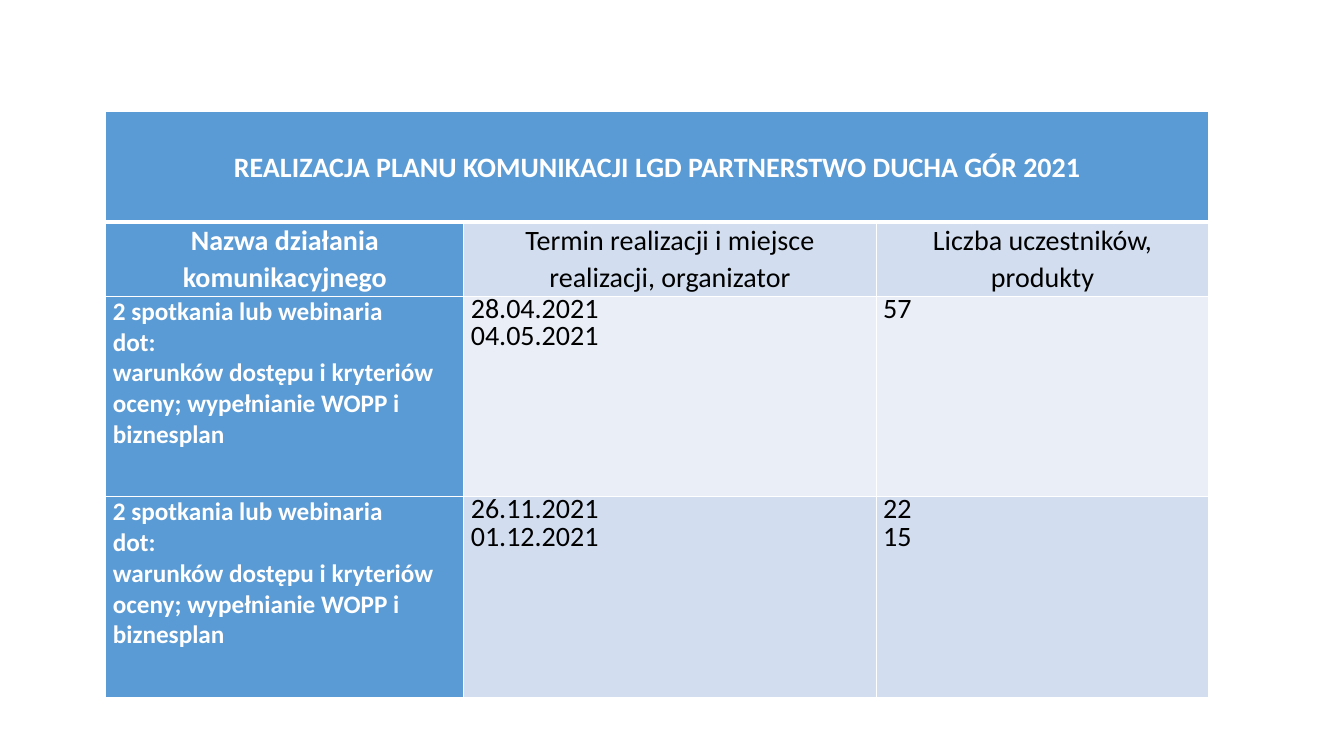
from lxml import etree
from pptx import Presentation
from pptx.dml.color import RGBColor
from pptx.enum import text
from pptx.oxml import ns
from pptx.util import Inches, Pt

BLUE = RGBColor(0x5B, 0x9B, 0xD5)
MID_BLUE = RGBColor(0xD2, 0xDE, 0xEF)
PALE_BLUE = RGBColor(0xEA, 0xEF, 0xF7)
WHITE = RGBColor(0xFF, 0xFF, 0xFF)
BLACK = RGBColor(0, 0, 0)

COLUMN_WIDTHS = [3.55, 4.09, 3.3]
ROW_HEIGHTS = [1.09, 0.74, 1.99, 1.99]

TITLE = "REALIZACJA PLANU KOMUNIKACJI LGD PARTNERSTWO DUCHA GÓR 2021"
HEADINGS = [
    "Nazwa działania komunikacyjnego",
    "Termin realizacji i miejsce realizacji, organizator",
    "Liczba uczestników, produkty",
]
ACTIVITY = [
    "2 spotkania lub webinaria",
    "dot:",
    "warunków dostępu i kryteriów oceny; wypełnianie WOPP i biznesplan",
]
MEETINGS = [
    (["28.04.2021", "04.05.2021"], ["57"], PALE_BLUE),
    (["26.11.2021", "01.12.2021"], ["22", "15"], MID_BLUE),
]


def add_border(cell, side, width):
    """Draw one white edge of a cell."""
    properties = cell._tc.get_or_add_tcPr()
    line = etree.SubElement(properties, ns.qn(f"a:ln{side}"), w=str(Pt(width)))
    fill = etree.SubElement(line, ns.qn("a:solidFill"))
    etree.SubElement(fill, ns.qn("a:srgbClr"), val=str(WHITE))


def style_cell(cell, fill, top=1, bottom=1):
    for side, width in (("L", 1), ("R", 1), ("T", top), ("B", bottom)):
        add_border(cell, side, width)
    cell.fill.solid()
    cell.fill.fore_color.rgb = fill
    cell.margin_left = cell.margin_right = Inches(0.07)
    cell.margin_top = cell.margin_bottom = 0


def write_cell(cell, lines, size=20, white=False, spacing=1.0, centred=False):
    """Write one paragraph per line; white text is bold."""
    frame = cell.text_frame
    for index, line in enumerate(lines):
        para = frame.paragraphs[0] if index == 0 else frame.add_paragraph()
        para.line_spacing = spacing
        if centred:
            para.alignment = text.PP_ALIGN.CENTER
        span = para.add_run()
        span.text = line
        span.font.name = "Calibri"
        span.font.size = Pt(size)
        span.font.bold = white
        span.font.color.rgb = WHITE if white else BLACK


def add_plan_table(page):
    frame = page.shapes.add_table(
        len(ROW_HEIGHTS), len(COLUMN_WIDTHS), Inches(1.05), Inches(1.11),
        Inches(sum(COLUMN_WIDTHS)), Inches(sum(ROW_HEIGHTS)))
    table = frame.table
    table.first_row = table.horz_banding = False
    for column, width in zip(table.columns, COLUMN_WIDTHS):
        column.width = Inches(width)
    for row, height in zip(table.rows, ROW_HEIGHTS):
        row.height = Inches(height)
    return table


def main():
    deck = Presentation()
    deck.slide_width, deck.slide_height = Inches(13.33), Inches(7.5)
    page = deck.slides.add_slide(deck.slide_layouts[6])
    table = add_plan_table(page)

    # Title row
    title = table.cell(0, 0)
    title.merge(table.cell(0, len(COLUMN_WIDTHS) - 1))
    for cell in table.rows[0].cells:
        style_cell(cell, BLUE, bottom=3)
    title.vertical_anchor = text.MSO_ANCHOR.MIDDLE
    write_cell(title, [TITLE], white=True, spacing=1.07, centred=True)

    # Column headings
    for column, heading in enumerate(HEADINGS):
        cell = table.cell(1, column)
        first = column == 0
        style_cell(cell, BLUE if first else MID_BLUE, top=3)
        write_cell(cell, [heading], white=first, spacing=1.07, centred=True)

    # Meetings
    for row, (dates, attendance, fill) in enumerate(MEETINGS, start=2):
        activity = table.cell(row, 0)
        style_cell(activity, BLUE)
        write_cell(activity, ACTIVITY, size=18, white=True)
        for column, lines in enumerate((dates, attendance), start=1):
            cell = table.cell(row, column)
            style_cell(cell, fill)
            write_cell(cell, lines, spacing=0.8)

    deck.save("out.pptx")


if __name__ == "__main__":
    main()
